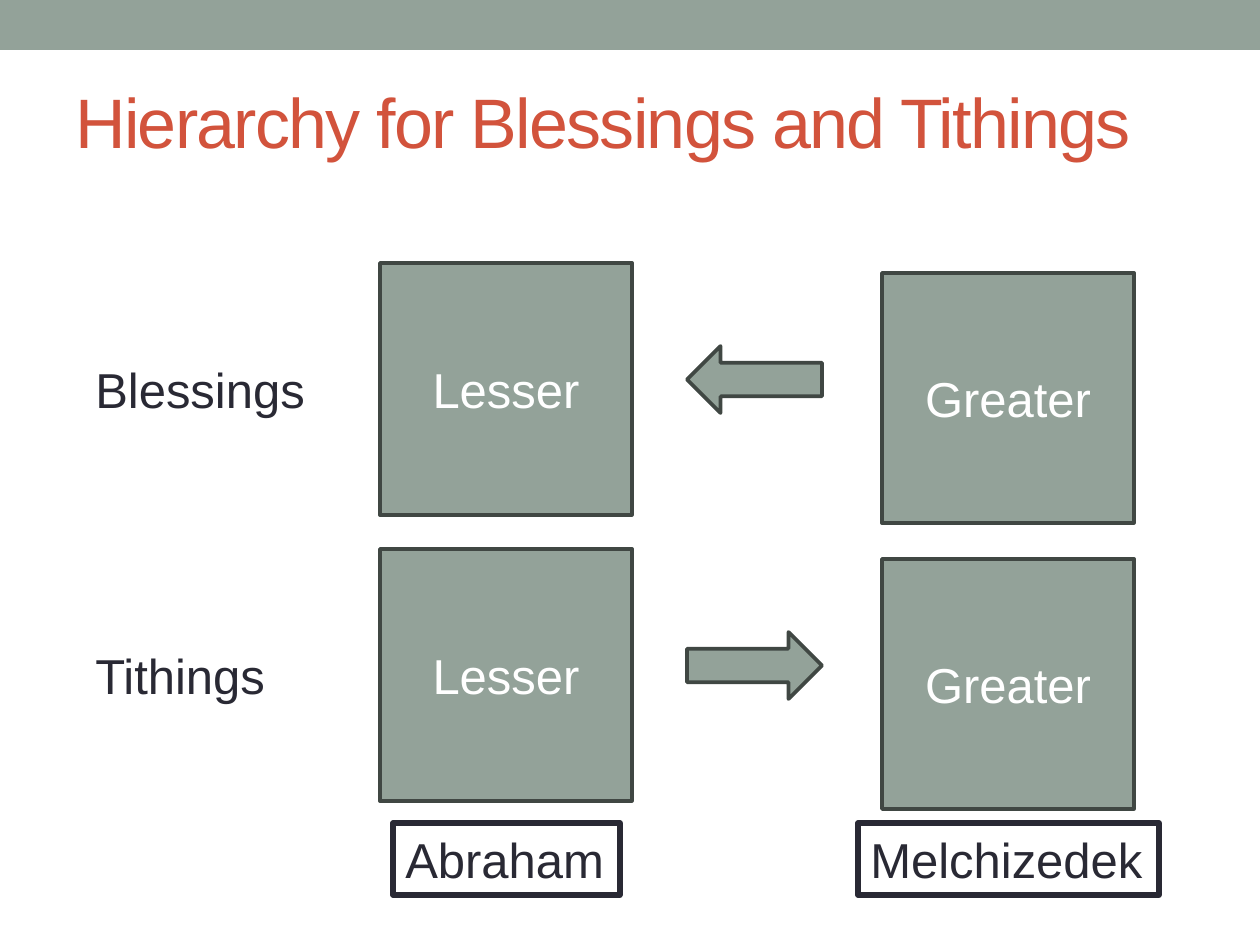
from pptx import Presentation
from pptx.dml.color import RGBColor
from pptx.enum.shapes import MSO_SHAPE as SHAPE
from pptx.enum.text import MSO_ANCHOR as ANCHOR, PP_ALIGN as ALIGN
from pptx.util import Emu, Pt

PX = 914400 / 126
COLORS = {"sage": "93A299", "edge": "404743", "ink": "292934",
          "title": "D2533C", "white": "FFFFFF"}

deck = Presentation()
deck.slide_width, deck.slide_height = Emu(round(1260 * PX)), Emu(round(945 * PX))
slide = deck.slides.add_slide(deck.slide_layouts[6])


def add_shape(kind, box, fill=None, line=None, width=2.08):
    shape = slide.shapes.add_shape(kind, *[Emu(round(v * PX)) for v in box])
    shape.shadow.inherit = False
    for part, color in ((shape.fill, fill), (shape.line.fill, line)):
        if color:
            part.solid()
            part.fore_color.rgb = RGBColor.from_string(COLORS[color])
        else:
            part.background()
    if line:
        shape.line.width = Pt(width)
    return shape


def write(shape, text, color, size=28, align=ALIGN.LEFT, anchor=ANCHOR.TOP, wrap=False):
    frame = shape.text_frame
    frame.word_wrap = wrap
    frame.vertical_anchor = anchor
    paragraph = frame.paragraphs[0]
    paragraph.alignment = align
    run = paragraph.add_run()
    run.text = text
    font = paragraph.font
    font.name, font.size = "Arial", Pt(size)
    font.color.rgb = RGBColor.from_string(COLORS[color])
    return run


add_shape(SHAPE.RECTANGLE, (0, 0, 1260, 50), "sage")

title = slide.shapes.add_textbox(*[Emu(round(v * PX)) for v in (63, 53, 1134, 136)])
title_run = write(title, "Hierarchy for Blessings and Tithings", "title",
                  size=40, anchor=ANCHOR.MIDDLE, wrap=True)
title_run.font._element.set("spc", "-100")

# Each row: gift, label width, direction of the arrow
ROW_STEP = 286
for row, (gift, label_width, turn) in enumerate([("Blessings", 237, 180), ("Tithings", 198, 0)]):
    drop = row * ROW_STEP
    for rank, box in (("Lesser", (380, 263 + drop, 252, 252)),
                      ("Greater", (882, 273 + drop, 252, 250))):
        square = add_shape(SHAPE.RECTANGLE, box, "sage", "edge")
        write(square, rank, "white", align=ALIGN.CENTER, anchor=ANCHOR.MIDDLE, wrap=True)
    arrow = add_shape(SHAPE.RIGHT_ARROW, (687, 346 + drop, 135, 67), "sage", "edge")
    arrow.rotation = turn
    label = slide.shapes.add_textbox(
        *[Emu(round(v * PX)) for v in (83, 353 + drop, label_width, 72)])
    write(label, gift, "ink")

for person, left, width in (("Abraham", 393, 227), ("Melchizedek", 858, 301)):
    name_box = add_shape(SHAPE.RECTANGLE, (left, 823, width, 72), line="ink", width=3)
    write(name_box, person, "ink")

deck.save("out.pptx")
